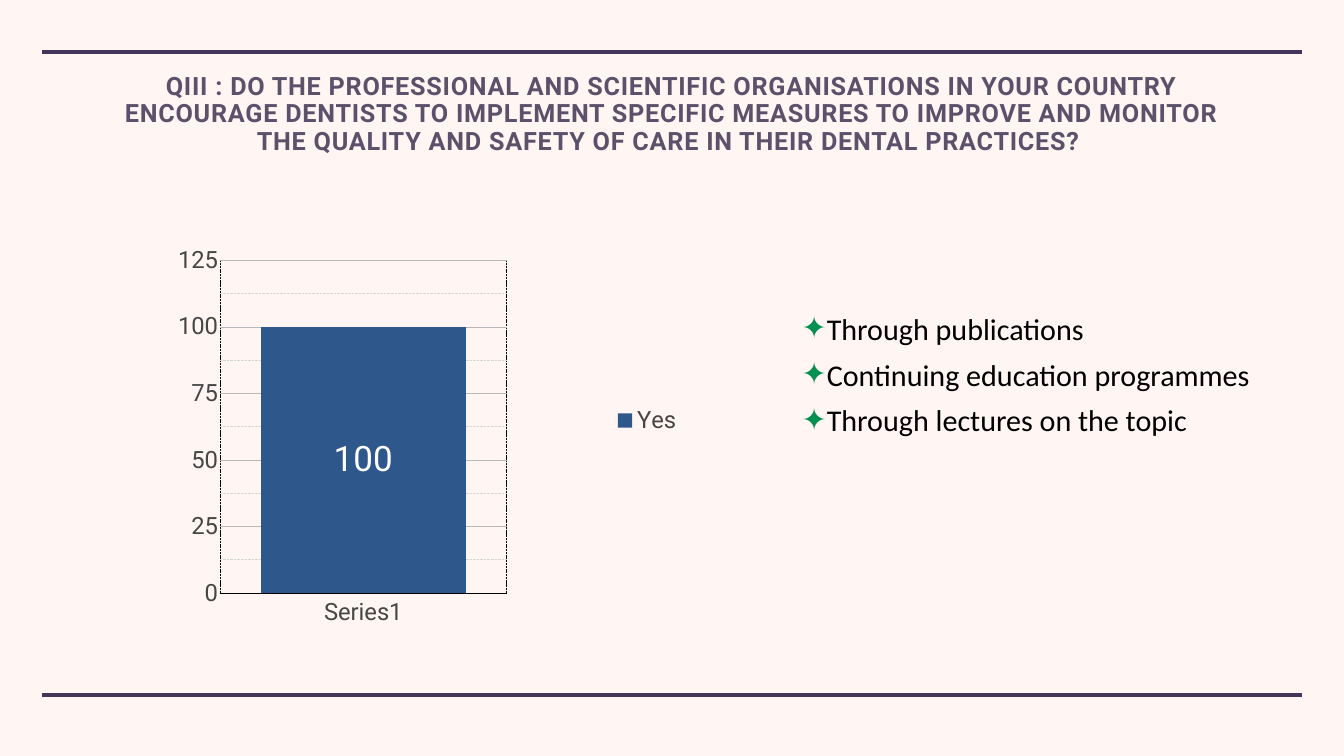
from lxml.etree import SubElement
from pptx import Presentation
from pptx.chart.data import CategoryChartData
from pptx.dml.color import RGBColor
from pptx.enum.chart import (XL_CHART_TYPE, XL_LABEL_POSITION, XL_LEGEND_POSITION,
                             XL_TICK_LABEL_POSITION, XL_TICK_MARK)
from pptx.enum.dml import MSO_LINE
from pptx.enum.shapes import MSO_CONNECTOR
from pptx.enum.text import MSO_ANCHOR, MSO_AUTO_SIZE, PP_ALIGN
from pptx.oxml import parse_xml
from pptx.oxml.ns import nsdecls, qn
from pptx.util import Inches, Pt

PX = 914400 / 50.4
COLORS = {
    "background": "FFF5F2", "rule": "443658", "title": "5B516A", "body": "000000",
    "bullet": "009051", "bar": "2E578C", "value": "FFFFFF", "label": "464646",
    "axis": "000000", "major": "B8B8B8", "minor": "D5D5D5",
}
QUESTION = (
    "QIII : DO THE PROFESSIONAL AND SCIENTIFIC ORGANISATIONS IN YOUR COUNTRY "
    "ENCOURAGE DENTISTS TO IMPLEMENT SPECIFIC MEASURES TO IMPROVE AND MONITOR "
    "THE QUALITY AND SAFETY OF CARE IN THEIR DENTAL PRACTICES? "
)
MEASURES = ["Through publications", "Continuing education programmes",
            "Through lectures on the topic"]


def px(length):
    """Turn px into EMU."""
    return round(length * PX)


def rgb(name):
    """Look up a colour by its role."""
    return RGBColor.from_string(COLORS[name])


def style_font(font, size, color, face="Roboto", bold=False):
    """Format a font."""
    font.size, font.name, font.bold = Pt(size), face, bold
    font.color.rgb = rgb(color)


def style_line(line, color, width, dash=None):
    """Format a line."""
    line.color.rgb = rgb(color)
    line.width = Pt(width)
    line.dash_style = dash


def place(placeholder, left, top, width, height, anchor, auto_size):
    """Move a placeholder and set up its text frame."""
    placeholder.left, placeholder.top = px(left), px(top)
    placeholder.width, placeholder.height = px(width), px(height)
    frame = placeholder.text_frame
    frame.margin_left = frame.margin_right = px(3)
    frame.margin_top = frame.margin_bottom = px(3)
    frame.word_wrap, frame.vertical_anchor = True, anchor
    frame.auto_size = auto_size
    return frame


def write(paragraph, text, size, color, face="Roboto", bold=False, align=PP_ALIGN.LEFT,
          line_spacing=1.0, before=0, tracking=0, bullet=None):
    """Write one formatted paragraph."""
    paragraph.alignment, paragraph.line_spacing = align, line_spacing
    paragraph.space_before = Pt(before)
    run = paragraph.add_run()
    run.text = text
    style_font(run.font, size, color, face, bold)
    if tracking:
        run.font._element.set("spc", str(round(tracking * 100)))
    if bullet:
        properties = paragraph._p.get_or_add_pPr()
        properties.set("marL", str(Inches(0.5)))
        properties.set("indent", str(Inches(-0.25)))
        bullet_color = SubElement(properties, qn("a:buClr"))
        SubElement(bullet_color, qn("a:srgbClr"), val=COLORS["bullet"])
        SubElement(properties, qn("a:buChar"), char=bullet)


def add_rule(slide, y, left=42, right=1302):
    """Draw a horizontal rule across the slide."""
    rule = slide.shapes.add_connector(MSO_CONNECTOR.STRAIGHT, px(left), px(y), px(right), px(y))
    style_line(rule.line, "rule", 6)
    SubElement(rule._element.spPr, qn("a:effectLst"))


def manual_layout(x, y, w, h, inner=False):
    """Build a chart layout in fractions of the chart area."""
    target = '<c:layoutTarget val="inner"/>' if inner else ""
    sizes = "".join(f'<c:{key} val="{value}"/>' for key, value in zip("xywh", (x, y, w, h)))
    return parse_xml(
        f'<c:layout {nsdecls("c")}><c:manualLayout>{target}<c:xMode val="edge"/>'
        f'<c:yMode val="edge"/>{sizes}</c:manualLayout></c:layout>')


def style_minor_gridlines(axis):
    """Show thin dotted minor gridlines on an axis."""
    axis.has_minor_gridlines = True
    gridlines = axis._element.find(qn("c:minorGridlines"))
    gridlines.append(parse_xml(
        f'<c:spPr {nsdecls("c", "a")}><a:ln w="{Pt(1)}"><a:solidFill>'
        f'<a:srgbClr val="{COLORS["minor"]}"/></a:solidFill>'
        '<a:prstDash val="sysDot"/></a:ln></c:spPr>'))


def style_axes(chart):
    """Format both axes and their gridlines."""
    answers, percent = chart.category_axis, chart.value_axis
    for axis in (answers, percent):
        axis.major_tick_mark = axis.minor_tick_mark = XL_TICK_MARK.NONE
        axis.has_major_gridlines = True
        style_font(axis.tick_labels.font, 34, "label")
    answers.tick_label_position = XL_TICK_LABEL_POSITION.LOW
    style_line(answers.format.line, "axis", 1)
    style_line(answers.major_gridlines.format.line, "axis", 1, MSO_LINE.SQUARE_DOT)
    percent.minimum_scale, percent.maximum_scale = 0, 125
    percent.major_unit, percent.minor_unit = 25, 12.5
    percent.format.line.fill.background()
    style_line(percent.major_gridlines.format.line, "major", 0.75)
    style_minor_gridlines(percent)


def add_answer_chart(slide):
    """Add the stacked column of answers."""
    data = CategoryChartData()
    data.categories = ["Series1"]
    data.add_series("Yes", [100])
    chart = slide.shapes.add_chart(XL_CHART_TYPE.COLUMN_STACKED, px(159), px(227),
                                   px(610), px(416), data).chart
    chart.has_title = False
    style_font(chart.font, 34, "label")
    style_axes(chart)
    plot = chart.plots[0]
    plot.gap_width, plot.overlap, plot.vary_by_categories = 40, 100, False
    yes = plot.series[0]
    yes.format.fill.solid()
    yes.format.fill.fore_color.rgb = rgb("bar")
    labels = yes.data_labels
    labels.show_value, labels.position = True, XL_LABEL_POSITION.CENTER
    labels.number_format, labels.number_format_is_linked = "#,##0", False
    style_font(labels.font, 50, "value")

    chart.has_legend = True
    legend = chart.legend
    legend.position, legend.include_in_layout = XL_LEGEND_POSITION.RIGHT, True
    style_font(legend.font, 34, "label")
    area = chart._chartSpace.chart.plotArea
    for part, layout in ((area, manual_layout(0.1, 0.08, 0.47, 0.8, inner=True)),
                         (legend._element, manual_layout(0.74, 0.42, 0.12, 0.09))):
        for automatic in part.findall(qn("c:layout")):
            part.remove(automatic)
        part.insert(0 if part is area else 1, layout)


def main():
    """Build the survey slide."""
    deck = Presentation()
    deck.slide_width, deck.slide_height = px(1344), px(756)
    slide = deck.slides.add_slide(deck.slide_layouts[1])
    slide.background.fill.solid()
    slide.background.fill.fore_color.rgb = rgb("background")
    for y in (52, 695):
        add_rule(slide, y)

    title = place(slide.shapes.title, 115, 71, 1114, 131, MSO_ANCHOR.TOP, MSO_AUTO_SIZE.NONE)
    write(title.paragraphs[0], QUESTION, 36, "title", bold=True, align=PP_ALIGN.CENTER,
          line_spacing=0.9, tracking=1.1)
    add_answer_chart(slide)

    body = place(slide.placeholders[1], 786, 285, 715, 178, MSO_ANCHOR.MIDDLE,
                 MSO_AUTO_SIZE.SHAPE_TO_FIT_TEXT)
    for index, measure in enumerate(MEASURES):
        paragraph = body.add_paragraph() if index else body.paragraphs[0]
        write(paragraph, measure, 43, "body", face="Calibri", before=6, bullet="✦",
              line_spacing=1.15 if index else 1.0)
    deck.save("out.pptx")


if __name__ == "__main__":
    main()
